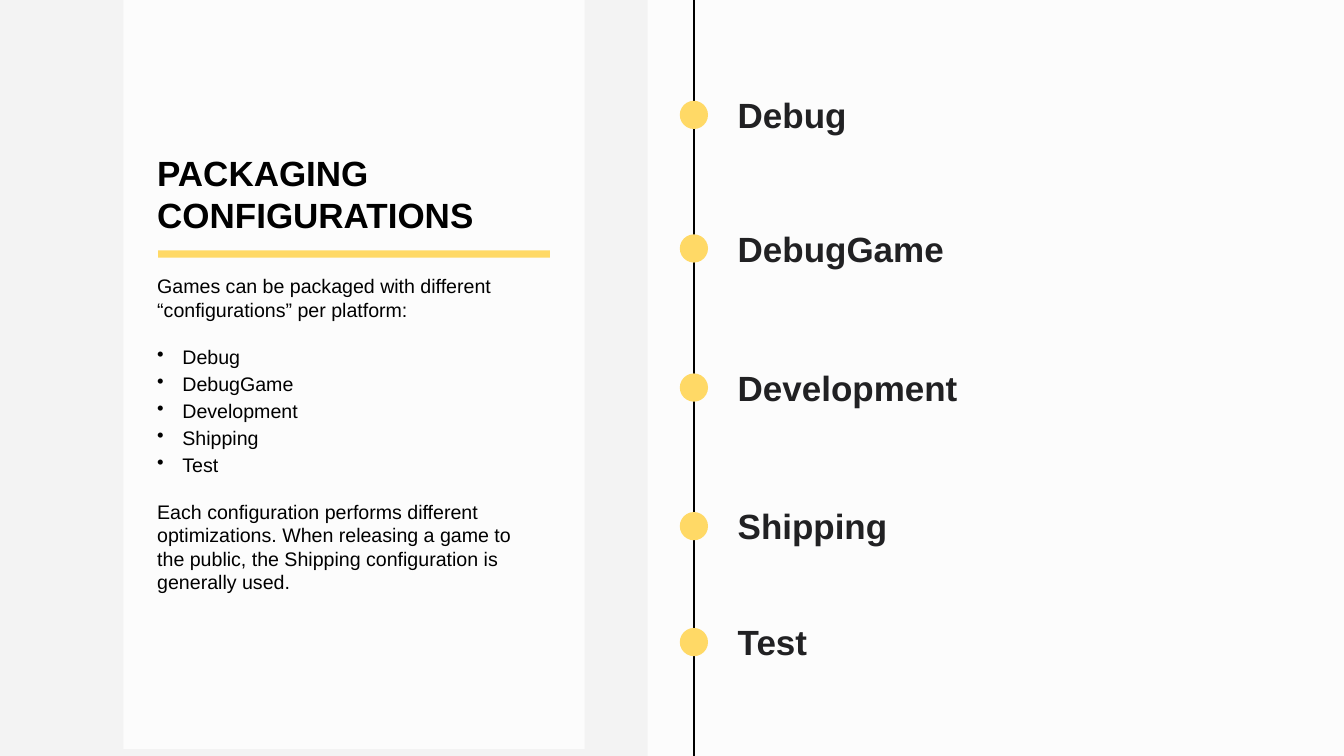
from dataclasses import dataclass

from lxml import etree
from pptx import Presentation
from pptx.dml.color import RGBColor
from pptx.enum.shapes import MSO_CONNECTOR, MSO_SHAPE
from pptx.enum.text import MSO_ANCHOR, MSO_AUTO_SIZE
from pptx.oxml.ns import qn
from pptx.util import Inches, Pt

BACKGROUND = RGBColor(0xF3, 0xF3, 0xF3)
WHITE = RGBColor(0xFF, 0xFF, 0xFF)
BLACK = RGBColor(0x00, 0x00, 0x00)
CHARCOAL = RGBColor(0x21, 0x21, 0x23)
YELLOW = RGBColor(0xFF, 0xD9, 0x66)

FONT = "Arial"
HEADING_SIZE, BODY_SIZE = 50, 28
LEADING = 1.2
TIMELINE_X, DOT_SIZE = 13.77, 0.56


@dataclass(frozen=True)
class Box:
    left: float
    top: float
    width: float
    height: float

    def lengths(self):
        return [Inches(n) for n in (self.left, self.top, self.width, self.height)]


@dataclass(frozen=True)
class Milestone:
    name: str
    label_top: float
    dot_top: float


MILESTONES = [
    Milestone("Debug", 1.8, 2.0),
    Milestone("DebugGame", 4.46, 4.65),
    Milestone("Development", 7.21, 7.41),
    Milestone("Shipping", 9.96, 10.16),
    Milestone("Test", 12.26, 12.46),
]


def add_filled(slide, kind: MSO_SHAPE, box: Box, color: RGBColor):
    shape = slide.shapes.add_shape(kind, *box.lengths())
    shape.shadow.inherit = False
    shape.fill.solid()
    shape.fill.fore_color.rgb = color
    shape.line.fill.background()
    return shape


def add_panel(slide, box: Box) -> None:
    panel = add_filled(slide, MSO_SHAPE.RECTANGLE, box, WHITE)
    color = panel.fill._xPr.find(qn("a:solidFill"))[0]
    etree.SubElement(color, qn("a:alpha"), val="80000")


def add_text_frame(slide, box: Box, anchor: MSO_ANCHOR):
    frame = slide.shapes.add_textbox(*box.lengths()).text_frame
    frame.word_wrap = True
    frame.auto_size = MSO_AUTO_SIZE.SHAPE_TO_FIT_TEXT
    frame.vertical_anchor = anchor
    frame.margin_left = frame.margin_right = Inches(0.06)
    frame.margin_top = frame.margin_bottom = Inches(0.06)
    return frame


def style(paragraph, size: float, color: RGBColor, bold: bool = False) -> None:
    paragraph.line_spacing = Pt(size * LEADING)
    paragraph.font.name = FONT
    paragraph.font.size = Pt(size)
    paragraph.font.bold = bold
    paragraph.font.color.rgb = color


def add_heading(slide, box: Box, text: str, color: RGBColor, anchor: MSO_ANCHOR) -> None:
    heading = add_text_frame(slide, box, anchor).paragraphs[0]
    heading.text = text
    style(heading, HEADING_SIZE, color, bold=True)


def add_bullet(paragraph) -> None:
    properties = paragraph._p.get_or_add_pPr()
    properties.set("marL", str(Inches(0.5)))
    properties.set("indent", str(Inches(-0.5)))
    bullet = etree.Element(qn("a:buChar"), char="•")
    properties.find(qn("a:defRPr")).addprevious(bullet)


def add_description(slide, box: Box) -> None:
    names = [milestone.name for milestone in MILESTONES]
    frame = add_text_frame(slide, box, MSO_ANCHOR.TOP)
    frame.text = "\n".join([
        "Games can be packaged with different “configurations” per platform:",
        *names,
        "Each configuration performs different optimizations. When releasing "
        "a game to the public, the Shipping configuration is generally used.",
    ])
    intro, *bullets, closing = frame.paragraphs
    for paragraph in frame.paragraphs:
        style(paragraph, BODY_SIZE, BLACK)
    for paragraph in bullets:
        paragraph.space_after = Pt(5)
        add_bullet(paragraph)

    # One line of space on either side of the list
    gap = Pt(BODY_SIZE * LEADING)
    intro.space_after = bullets[-1].space_after = gap


def add_timeline(slide) -> None:
    x = Inches(TIMELINE_X)
    axis = slide.shapes.add_connector(
        MSO_CONNECTOR.STRAIGHT, x, Inches(15), x, Inches(0))
    axis.line.color.rgb = BLACK
    axis.line.width = Pt(2)
    etree.SubElement(axis._element.spPr, qn("a:effectLst"))

    for milestone in MILESTONES:
        add_heading(slide, Box(14.58, milestone.label_top, 9.06, 0.95),
                    milestone.name, CHARCOAL, MSO_ANCHOR.MIDDLE)
        dot = Box(TIMELINE_X - DOT_SIZE / 2, milestone.dot_top, DOT_SIZE, DOT_SIZE)
        add_filled(slide, MSO_SHAPE.OVAL, dot, YELLOW)


def main() -> None:
    deck = Presentation()
    deck.slide_width, deck.slide_height = Inches(26.67), Inches(15)
    slide = deck.slides.add_slide(deck.slide_layouts[6])
    slide.background.fill.solid()
    slide.background.fill.fore_color.rgb = BACKGROUND

    # Panels
    add_panel(slide, Box(12.85, 0, 13.82, 15))
    add_panel(slide, Box(2.45, -0.14, 9.15, 15))

    # Title and description
    add_description(slide, Box(3.06, 5.38, 7.75, 6.52))
    add_heading(slide, Box(3.06, 2.94, 7.75, 1.8), "PACKAGING CONFIGURATIONS",
                BLACK, MSO_ANCHOR.BOTTOM)
    add_filled(slide, MSO_SHAPE.RECTANGLE, Box(3.14, 4.97, 7.77, 0.14), YELLOW)

    # Timeline of configurations
    add_timeline(slide)
    deck.save("out.pptx")


if __name__ == "__main__":
    main()
